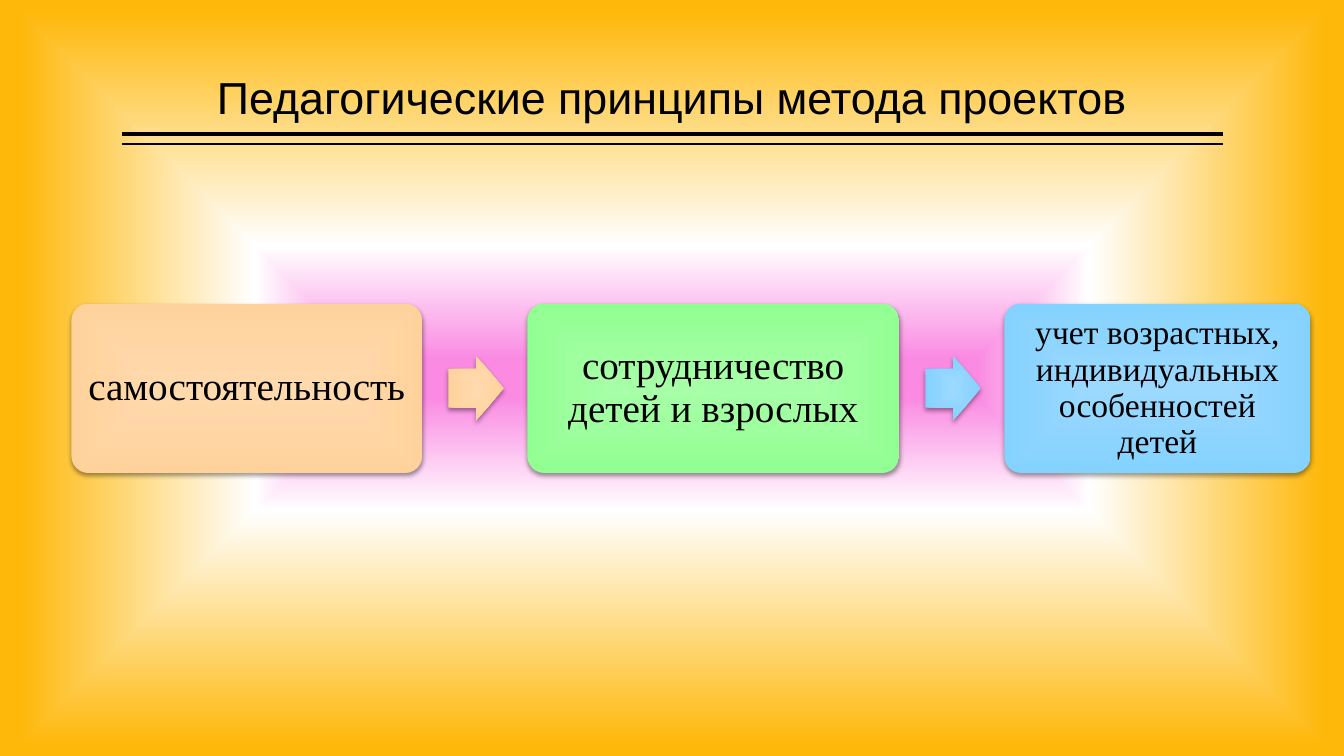
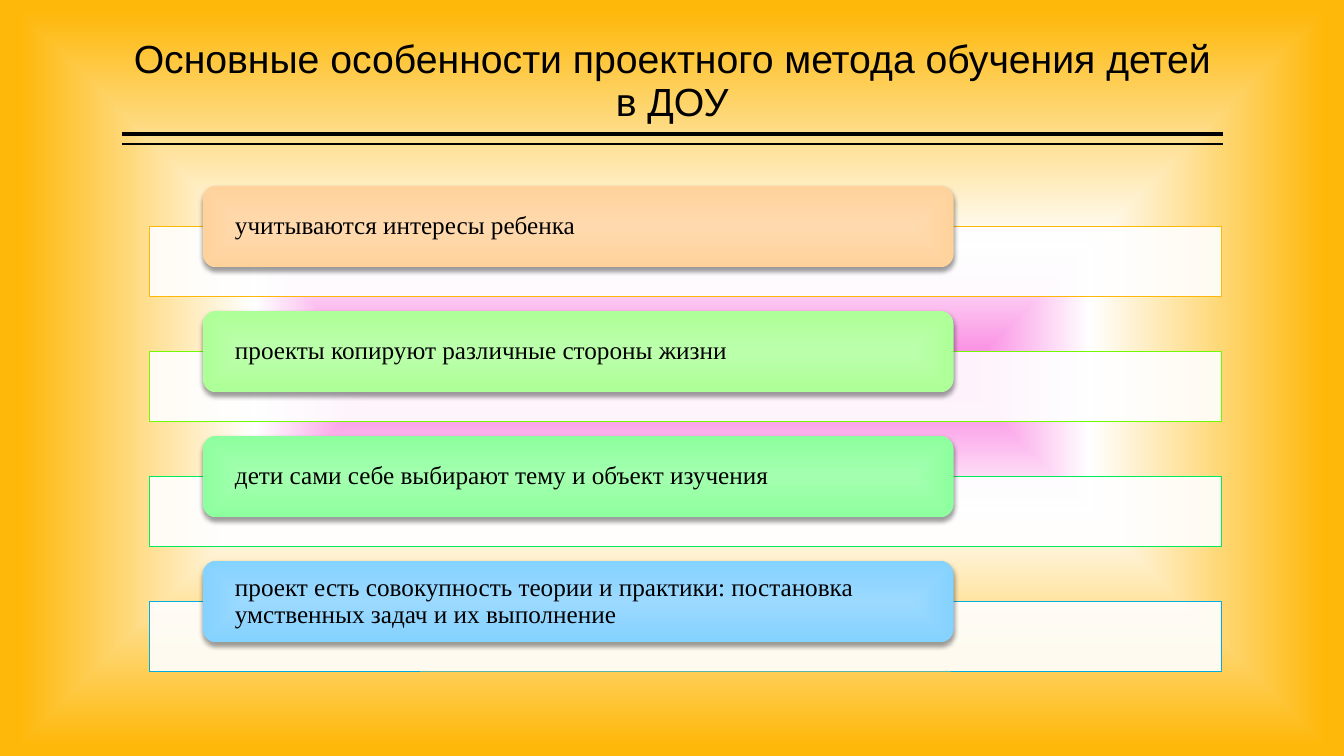
from lxml import etree
from pptx import Presentation
from pptx import util as u
from pptx.dml.color import RGBColor
from pptx.enum import shapes, text
from pptx.oxml import ns

Cm, Pt = u.Cm, u.Pt
BLACK = RGBColor(0x00, 0x00, 0x00)
WHITE = RGBColor(0xFF, 0xFF, 0xFF)
GOLD = RGBColor(0xFE, 0xB8, 0x0A)
PINK = RGBColor(0xFA, 0x8A, 0xE2)
LIME_LINE = RGBColor(0x71, 0xF9, 0x01)
GREEN_LINE = RGBColor(0x00, 0xEA, 0x59)
BLUE_LINE = RGBColor(0x00, 0xAD, 0xDC)

# Gradients run from the centre to the edge
PEACH = (RGBColor(0xFF, 0xDA, 0xAE), RGBColor(0xFF, 0xD2, 0x9B))
LIME = (RGBColor(0xBC, 0xFF, 0xAB), RGBColor(0xAD, 0xFF, 0x97))
MINT = (RGBColor(0xA3, 0xFF, 0xAF), RGBColor(0x8E, 0xFF, 0x9E))
GREEN = (RGBColor(0xA7, 0xFF, 0xA7), RGBColor(0x92, 0xFF, 0x92))
BLUE = (RGBColor(0x9B, 0xD9, 0xFF), RGBColor(0x84, 0xD2, 0xFF))

TITLE_FONT, BODY_FONT = "Arial", "Times New Roman"
LEFT, RIGHT = 3.07, 30.81


def add_child(parent, tag, **attributes):
    values = {name: str(value) for name, value in attributes.items()}
    return etree.SubElement(parent, ns.qn(tag), values)


def set_gradient(fill, owner, stops, kind):
    """Fill with a gradient that spreads from the centre; stops are (percent, colour)."""
    fill.gradient()
    gradient = next(owner.iter(ns.qn("a:gradFill")))
    for child in list(gradient):
        gradient.remove(child)
    stop_list = add_child(gradient, "a:gsLst")
    for percent, colour in stops:
        stop = add_child(stop_list, "a:gs", pos=percent * 1000)
        add_child(stop, "a:srgbClr", val=colour)
    centre = add_child(gradient, "a:path", path=kind)
    add_child(centre, "a:fillToRect", l=50000, t=50000, r=50000, b=50000)


def add_text(frame, words, font, size, align, anchor, insets):
    frame.word_wrap = True
    frame.vertical_anchor = anchor
    frame.margin_left = frame.margin_right = Cm(insets[0])
    frame.margin_top = frame.margin_bottom = Cm(insets[1])
    paragraph = frame.paragraphs[0]
    paragraph.alignment = align
    paragraph.line_spacing = 0.9
    run = paragraph.add_run()
    run.text = words
    run.font.name = font
    run.font.size = Pt(size)
    run.font.color.rgb = BLACK


def add_raised_shape(slide, preset, box, colours):
    """Borderless shape with a soft gradient and a shadow below it."""
    shape = slide.shapes.add_shape(preset, *map(Cm, box))
    set_gradient(shape.fill, shape._element.spPr, zip((0, 100), colours), "rect")
    shape.line.fill.background()
    shape.shadow.inherit = False
    effects = shape._element.spPr.find(ns.qn("a:effectLst"))
    shadow = add_child(effects, "a:outerShdw", blurRad=Pt(3.5), dist=Pt(2),
                       dir=5400000, algn="ctr", rotWithShape=0)
    colour = add_child(shadow, "a:srgbClr", val=BLACK)
    add_child(colour, "a:alpha", val=38000)
    return shape


def add_base_slide(presentation, title, size):
    """Blank slide with the shared background, title and double rule."""
    slide = presentation.slides.add_slide(presentation.slide_layouts[6])
    set_gradient(slide.background.fill, slide._element,
                 ((5, PINK), (35, WHITE), (97, GOLD)), "shape")
    for y, weight in ((3.38, 3), (3.63, 1)):
        rule = slide.shapes.add_connector(
            shapes.MSO_CONNECTOR.STRAIGHT, Cm(RIGHT), Cm(y), Cm(LEFT), Cm(y))
        rule.line.color.rgb = BLACK
        rule.line.width = Pt(weight)
        add_child(rule._element.spPr, "a:effectLst")
    title_box = slide.shapes.add_textbox(Cm(LEFT), Cm(0.2), Cm(RIGHT - LEFT), Cm(3.07))
    add_text(title_box.text_frame, title, TITLE_FONT, size,
             text.PP_ALIGN.CENTER, text.MSO_ANCHOR.BOTTOM, (0, 0.13))
    return slide


def add_process(slide, left, top, height, steps):
    """Row of boxes, each after the first led in by an arrow."""
    gap, arrow_width, arrow_height = 2.65, 1.4, 1.63
    arrow_top = top + (height - arrow_height) / 2
    x = left
    previous_colours = None
    for words, width, size, colours in steps:
        if previous_colours:
            # The first arrow keeps the first colour, the last takes the final one
            arrow_colours = PEACH if previous_colours is PEACH else colours
            arrow = add_raised_shape(
                slide, shapes.MSO_SHAPE.RIGHT_ARROW,
                (x - gap + 0.66, arrow_top, arrow_width, arrow_height), arrow_colours)
            arrow.adjustments[0] = 0.6
        box = add_raised_shape(slide, shapes.MSO_SHAPE.ROUNDED_RECTANGLE,
                               (x, top, width, height), colours)
        box.adjustments[0] = 0.1
        add_text(box.text_frame, words, BODY_FONT, size,
                 text.PP_ALIGN.CENTER, text.MSO_ANCHOR.MIDDLE, (0.28, 0.25))
        x += width + gap
        previous_colours = colours


def add_feature_list(slide, left, top, width, features):
    """Stack of outlined bars, each with a raised label over its top edge."""
    pitch, bar_height, label_height = 3.15, 1.75, 2.06
    for index, (words, line_colour, colours) in enumerate(features):
        label_top = top + index * pitch
        bar = slide.shapes.add_shape(
            shapes.MSO_SHAPE.RECTANGLE, Cm(left), Cm(label_top + label_height / 2),
            Cm(width), Cm(bar_height))
        bar.shadow.inherit = False
        bar.fill.solid()
        bar.fill.fore_color.rgb = WHITE
        white = bar._element.spPr.find(ns.qn("a:solidFill"))[0]
        add_child(white, "a:alpha", val=90000)
        bar.line.color.rgb = line_colour
        bar.line.width = Pt(0.5)
        label = add_raised_shape(
            slide, shapes.MSO_SHAPE.ROUNDED_RECTANGLE,
            (left + width * 0.05, label_top, width * 0.7, label_height), colours)
        add_text(label.text_frame, words, BODY_FONT, 18,
                 text.PP_ALIGN.LEFT, text.MSO_ANCHOR.MIDDLE, (0.71, 0))


def main():
    presentation = Presentation()
    presentation.slide_width, presentation.slide_height = Cm(33.87), Cm(19.05)

    # Principles
    slide = add_base_slide(presentation, "Педагогические принципы метода проектов", 32)
    add_process(slide, 1.8, 7.65, 4.27, (
        ("самостоятельность", 8.84, 28, PEACH),
        ("сотрудничество детей и взрослых", 9.37, 28, GREEN),
        ("учет возрастных, индивидуальных особенностей детей", 7.72, 24, BLUE),
    ))

    # Features
    slide = add_base_slide(
        presentation, "Основные особенности проектного метода обучения детей в ДОУ", 28)
    add_feature_list(slide, 3.76, 4.68, 27.03, (
        ("учитываются интересы ребенка", GOLD, PEACH),
        ("проекты копируют различные стороны жизни", LIME_LINE, LIME),
        ("дети сами себе выбирают тему и объект изучения", GREEN_LINE, MINT),
        ("проект есть совокупность теории и практики: постановка "
         "умственных задач и их выполнение", BLUE_LINE, BLUE),
    ))
    presentation.save("out.pptx")


if __name__ == "__main__":
    main()
